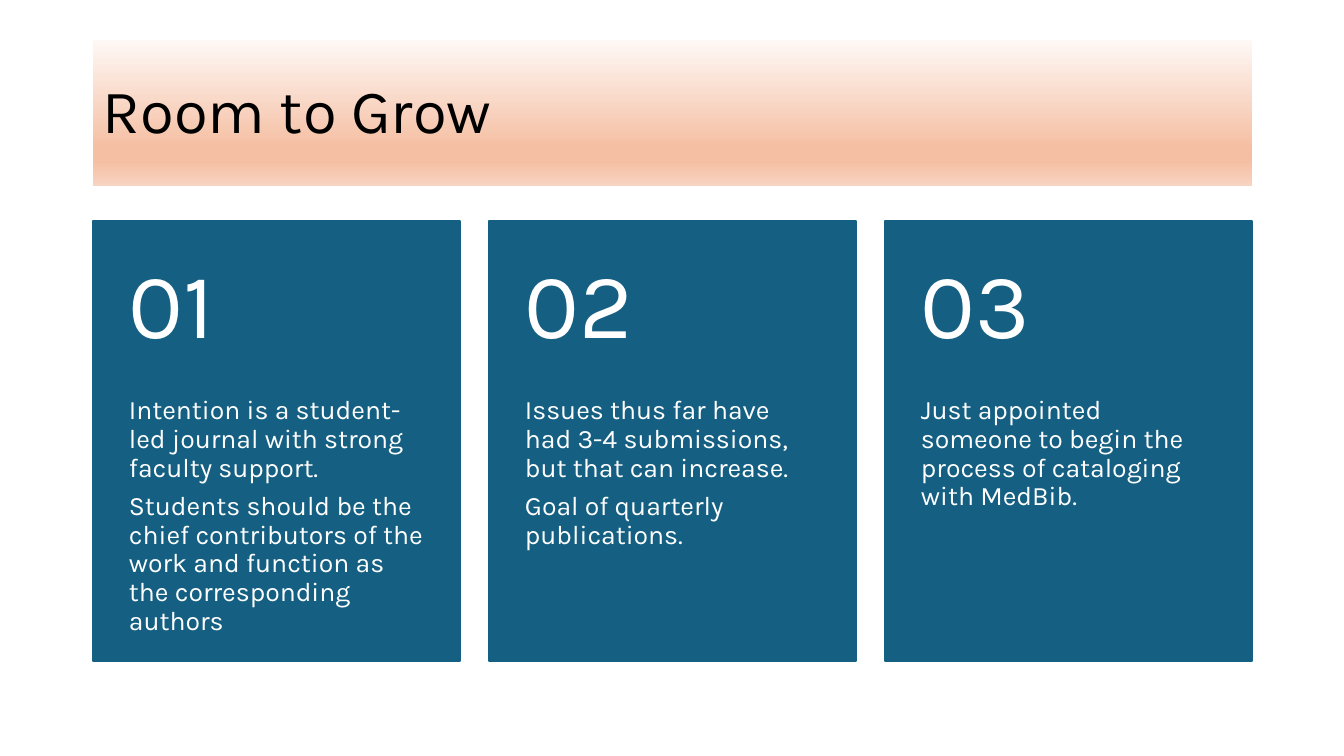
from dataclasses import dataclass

import lxml.etree
import pptx
import pptx.dml.color
import pptx.enum.shapes
import pptx.enum.text
import pptx.oxml.ns
import pptx.util
from pptx.dml.color import RGBColor
from pptx.util import Cm, Pt

FONT = "Karla"
BLACK = RGBColor(0x00, 0x00, 0x00)
WHITE = RGBColor(0xFF, 0xFF, 0xFF)
BLUE = RGBColor(0x15, 0x60, 0x82)
BANNER_STOPS = {
    0: RGBColor(0xFE, 0xF8, 0xF5),
    74: RGBColor(0xF5, 0xBF, 0xA3),
    83: RGBColor(0xF5, 0xBF, 0xA3),
    100: RGBColor(0xF8, 0xD4, 0xC2),
}

LEFT = 2.34
CONTENT_WIDTH = 29.21
CARD_TOP = 5.56
CARD_WIDTH = 9.25
CARD_HEIGHT = 11.1
NUMBER_HEIGHT = CARD_HEIGHT * 0.4


@dataclass(frozen=True)
class Box:
    left: float
    top: float
    width: float
    height: float

    def lengths(self) -> tuple[Cm, ...]:
        return Cm(self.left), Cm(self.top), Cm(self.width), Cm(self.height)


@dataclass(frozen=True)
class TextStyle:
    size: float
    color: RGBColor
    anchor: pptx.enum.text.MSO_ANCHOR
    margins: tuple[float, float, float, float]
    space_after: float


@dataclass(frozen=True)
class Card:
    number: str
    paragraphs: tuple[str, ...]


MIDDLE = pptx.enum.text.MSO_ANCHOR.MIDDLE
TOP = pptx.enum.text.MSO_ANCHOR.TOP
TITLE_STYLE = TextStyle(44, BLACK, MIDDLE, (0.25, 0.13, 0.25, 0.13), 0)
NUMBER_STYLE = TextStyle(66, WHITE, MIDDLE, (0.91, 0.46, 0.91, 0.46), 0)
BODY_STYLE = TextStyle(19, WHITE, TOP, (0.91, 0, 0.91, 0.91), 6.8)

CARDS = (
    Card("01", (
        "Intention is a student-led journal with strong faculty support.",
        "Students should be the chief contributors of the work and function "
        "as the corresponding authors",
    )),
    Card("02", (
        "Issues thus far have had 3-4 submissions, but that can increase.",
        "Goal of quarterly publications.",
    )),
    Card("03", (
        "Just appointed someone to begin the process of cataloging with MedBib.",
    )),
)


def set_attributes(target: object, values: dict[str, object]) -> None:
    for name, value in values.items():
        setattr(target, name, value)


def write_text(shape, paragraphs: tuple[str, ...], style: TextStyle) -> None:
    frame = shape.text_frame
    left, top, right, bottom = (Cm(margin) for margin in style.margins)
    set_attributes(frame, {
        "word_wrap": True,
        "vertical_anchor": style.anchor,
        "margin_left": left,
        "margin_top": top,
        "margin_right": right,
        "margin_bottom": bottom,
    })
    frame.text = "\n".join(paragraphs)
    for paragraph in frame.paragraphs:
        set_attributes(paragraph, {
            "alignment": pptx.enum.text.PP_ALIGN.LEFT,
            "line_spacing": 0.9,
            "space_before": Pt(0),
            "space_after": Pt(style.space_after),
        })
        font = paragraph.runs[0].font
        set_attributes(font, {"name": FONT, "size": Pt(style.size)})
        font.color.rgb = style.color


def add_rectangle(slide, box: Box):
    shape = slide.shapes.add_shape(
        pptx.enum.shapes.MSO_SHAPE.RECTANGLE, *box.lengths()
    )
    shape.shadow.inherit = False
    return shape


def add_text(slide, box: Box, paragraphs: tuple[str, ...], style: TextStyle) -> None:
    write_text(slide.shapes.add_textbox(*box.lengths()), paragraphs, style)


def add_banner(slide, title: str) -> None:
    banner = add_rectangle(slide, Box(LEFT, 1.01, CONTENT_WIDTH, 3.68))
    banner.line.fill.background()
    banner.fill.gradient()
    banner.fill.gradient_angle = 270
    qualified = pptx.oxml.ns.qn
    stops = next(banner.element.iter(qualified("a:gsLst")))
    for stop in list(stops):
        stops.remove(stop)
    for percent, color in BANNER_STOPS.items():
        stop = lxml.etree.SubElement(
            stops, qualified("a:gs"), pos=str(percent * 1000)
        )
        lxml.etree.SubElement(stop, qualified("a:srgbClr"), val=str(color))
    write_text(banner, (title,), TITLE_STYLE)


def add_card(slide, card: Card, left: float) -> None:
    panel = add_rectangle(slide, Box(left, CARD_TOP, CARD_WIDTH, CARD_HEIGHT))
    panel.fill.solid()
    panel.fill.fore_color.rgb = BLUE
    panel.line.color.rgb = BLUE
    panel.line.width = Pt(1.5)
    body_box = Box(
        left, CARD_TOP + NUMBER_HEIGHT, CARD_WIDTH, CARD_HEIGHT - NUMBER_HEIGHT
    )
    add_text(slide, body_box, card.paragraphs, BODY_STYLE)
    number_box = Box(left, CARD_TOP, CARD_WIDTH, NUMBER_HEIGHT)
    add_text(slide, number_box, (card.number,), NUMBER_STYLE)


def main() -> None:
    presentation = pptx.Presentation()
    set_attributes(presentation, {
        "slide_width": Cm(33.87),
        "slide_height": Cm(19.05),
    })
    slide = presentation.slides.add_slide(presentation.slide_layouts[6])
    add_banner(slide, "Room to Grow")
    pitch = (CONTENT_WIDTH - CARD_WIDTH) / (len(CARDS) - 1)
    for index, card in enumerate(CARDS):
        add_card(slide, card, LEFT + index * pitch)
    presentation.save("out.pptx")


if __name__ == "__main__":
    main()
